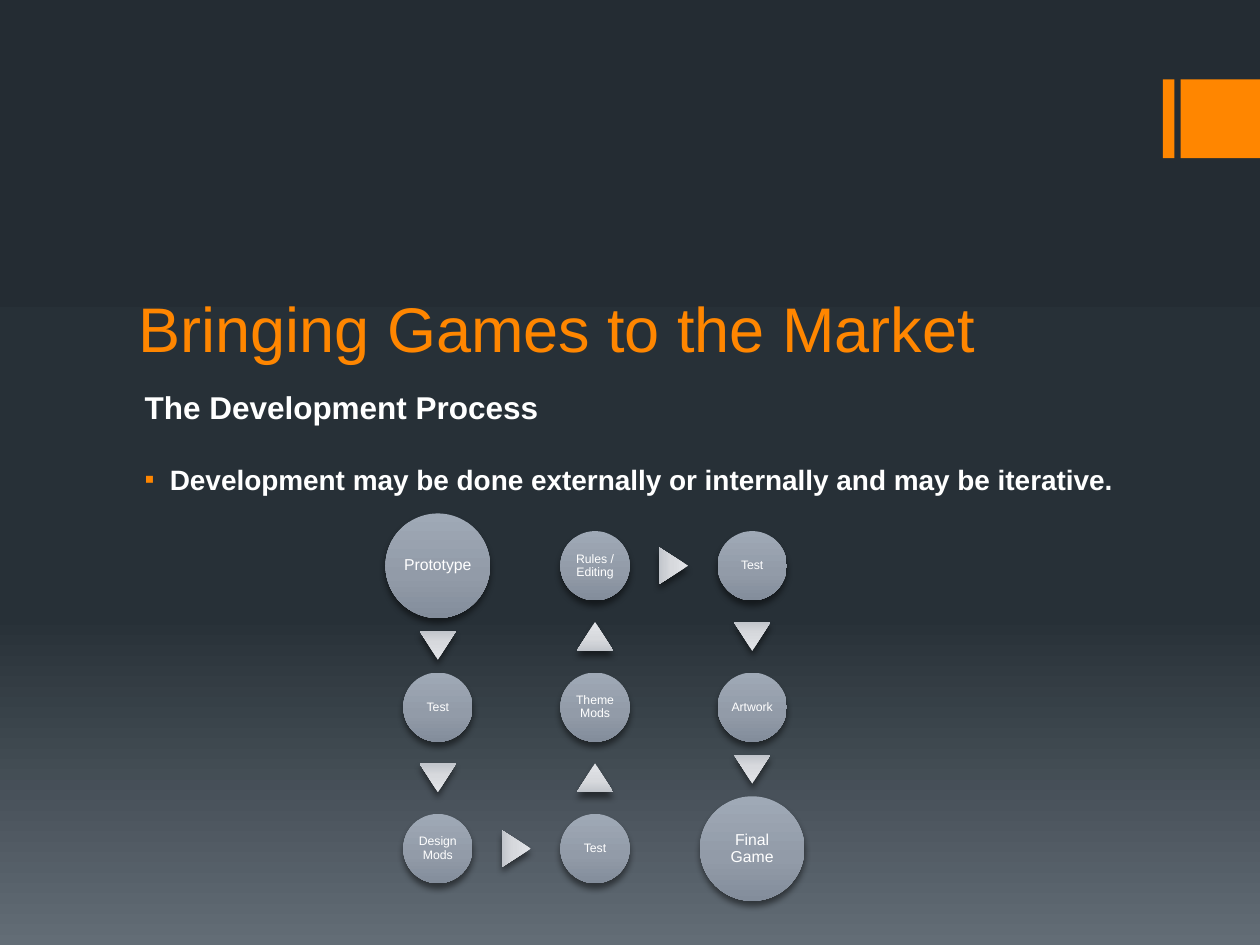
from itertools import pairwise

from pptx import Presentation
from pptx.dml.color import RGBColor
from pptx.enum.shapes import MSO_SHAPE as Shape
from pptx.enum.text import MSO_ANCHOR as Anchor, MSO_AUTO_SIZE as AutoSize, PP_ALIGN as Align
from pptx.oxml import parse_xml
from pptx.oxml.ns import nsdecls
from pptx.util import Inches, Pt

ORANGE = RGBColor(0xFF, 0x86, 0x00)
WHITE = RGBColor(0xFF, 0xFF, 0xFF)

# Gradients: (position in percent, colour), from top to bottom
NIGHT = [(0, RGBColor(0x24, 0x2C, 0x33)), (65, RGBColor(0x27, 0x30, 0x37)),
         (100, RGBColor(0x63, 0x6D, 0x76))]
STEEL = [(0, RGBColor(0x9F, 0xA9, 0xB6)), (60, RGBColor(0x92, 0x9B, 0xA8)),
         (100, RGBColor(0x83, 0x8D, 0x9B))]
SILVER = [(0, RGBColor(0xE2, 0xE4, 0xE8)), (60, RGBColor(0xD7, 0xD9, 0xDD)),
          (100, RGBColor(0xC1, 0xC5, 0xCB))]

# Steps in order: label, column, row, diameter in grid units
SMALL, LARGE = 2.2, 3.32
STEPS = [
    ("Prototype", 0, 0, LARGE), ("Test", 0, 1, SMALL), ("Design Mods", 0, 2, SMALL),
    ("Test", 1, 2, SMALL), ("Theme Mods", 1, 1, SMALL), ("Rules / Editing", 1, 0, SMALL),
    ("Test", 2, 0, SMALL), ("Artwork", 2, 1, SMALL), ("Final Game", 2, 2, LARGE),
]
FLOW_LEFT, FLOW_TOP = 13.9, 17.96
COLUMN_GAP, ROW_GAP = 4.99, 4.49


class DeckStyle:
    """Places styled elements on a grid of 40 columns by 30 rows."""
    font = "Arial"
    columns, rows = 40, 30

    def __init__(self, prs):
        self.prs = prs
        self.slide = prs.slides.add_slide(prs.slide_layouts[5])

    def box(self, left, top, width, height):
        column = self.prs.slide_width / self.columns
        row = self.prs.slide_height / self.rows
        return round(left * column), round(top * row), round(width * column), round(height * row)

    def gradient(self, fill, owner, stops):
        fill.gradient()
        fill.gradient_angle = 270
        stop_list = owner.xpath(".//a:gsLst")[0]
        for old in list(stop_list):
            stop_list.remove(old)
        for position, colour in stops:
            stop_list.append(parse_xml(
                f'<a:gs {nsdecls("a")} pos="{position * 1000}"><a:srgbClr val="{colour}"/></a:gs>'))

    def background(self, stops):
        self.gradient(self.slide.background.fill, self.slide._element, stops)

    def format(self, paragraph, size, colour, bold=False):
        for run in paragraph.runs:
            font = run.font
            font.name, font.size, font.bold = self.font, Pt(size), bold
            font.color.rgb = colour

    def title(self, text, *place):
        title = self.slide.shapes.title
        title.left, title.top, title.width, title.height = self.box(*place)
        frame = title.text_frame
        frame.text = text
        frame.auto_size = AutoSize.NONE
        frame.vertical_anchor = Anchor.BOTTOM
        frame.paragraphs[0].alignment = Align.LEFT
        self.format(frame.paragraphs[0], 36, ORANGE)

    def body(self, heading, point, *place):
        frame = self.slide.shapes.add_textbox(*self.box(*place)).text_frame
        frame.word_wrap = True
        frame.text = heading
        bullet = frame.add_paragraph()
        bullet.text = point
        bullet.space_before = Pt(21)
        for paragraph, size in zip(frame.paragraphs, (18, 16)):
            self.format(paragraph, size, WHITE, bold=True)
            props = paragraph._p.get_or_add_pPr()
            props.set("marL", str(Inches(0.25)))
            props.set("indent", str(Inches(-0.2)))
        props = bullet._p.get_or_add_pPr()
        for mark in (f'<a:buClr {nsdecls("a")}><a:srgbClr val="{ORANGE}"/></a:buClr>',
                     f'<a:buFont {nsdecls("a")} typeface="{self.font}"/>',
                     f'<a:buChar {nsdecls("a")} char="▪"/>'):
            props.append(parse_xml(mark))

    def block(self, colour, *place):
        block = self.slide.shapes.add_shape(Shape.RECTANGLE, *self.box(*place))
        block.shadow.inherit = False
        block.fill.solid()
        block.fill.fore_color.rgb = colour
        block.line.fill.background()

    def raised(self, kind, centre_x, centre_y, width, height, stops):
        """A gradient shape with a soft shadow, placed by its centre."""
        place = self.box(centre_x - width / 2, centre_y - height / 2, width, height)
        shape = self.slide.shapes.add_shape(kind, *place)
        self.gradient(shape.fill, shape._element, stops)
        shape.line.fill.background()
        shape.shadow.inherit = False
        shape._element.spPr.find("{*}effectLst").append(parse_xml(
            f'<a:outerShdw {nsdecls("a")} blurRad="{Pt(3.8)}" dist="{Pt(3)}" dir="5400000" '
            'rotWithShape="0"><a:srgbClr val="000000"><a:alpha val="48000"/></a:srgbClr>'
            '</a:outerShdw>'))
        return shape

    def step(self, label, x, y, diameter):
        frame = self.raised(Shape.OVAL, x, y, diameter, diameter, STEEL).text_frame
        frame.margin_left = frame.margin_right = Inches(0.01)
        frame.margin_top = frame.margin_bottom = Inches(0.01)
        frame.word_wrap = True
        frame.vertical_anchor = Anchor.MIDDLE
        frame.text = label
        paragraph = frame.paragraphs[0]
        paragraph.alignment = Align.CENTER
        paragraph.line_spacing = 0.9
        self.format(paragraph, 9 if diameter == LARGE else 7, WHITE)

    def arrow(self, x, y, rotation):
        self.raised(Shape.ISOSCELES_TRIANGLE, x, y, 1.16, 0.92, SILVER).rotation = rotation


def centre(column, row):
    return FLOW_LEFT + column * COLUMN_GAP, FLOW_TOP + row * ROW_GAP


def main():
    prs = Presentation()
    prs.slide_width, prs.slide_height = Inches(10), Inches(7.5)
    deck = DeckStyle(prs)
    deck.background(NIGHT)

    # Corner accent
    deck.block(ORANGE, 36.92, 2.52, 0.36, 2.5)
    deck.block(ORANGE, 37.48, 2.52, 2.52, 2.5)

    # Title and text
    deck.title("Bringing Games to the Market", 4, 6.76, 32, 5.04)
    deck.body("The Development Process",
              "Development may be done externally or internally and may be iterative.",
              4, 12.12, 32, 15.48)

    # Development steps
    for label, column, row, diameter in STEPS:
        deck.step(label, *centre(column, row), diameter)

    # Arrows, midway between the facing edges of successive steps
    for (_, col, row, size), (_, next_col, next_row, next_size) in pairwise(STEPS):
        across, down = next_col - col, next_row - row
        (x, y), (next_x, next_y) = centre(col, row), centre(next_col, next_row)
        shift = (size - next_size) / 4
        rotation = 90 if across else 180 if down > 0 else 0
        deck.arrow((x + next_x) / 2 + across * shift, (y + next_y) / 2 + down * shift, rotation)

    prs.save("out.pptx")


if __name__ == "__main__":
    main()
